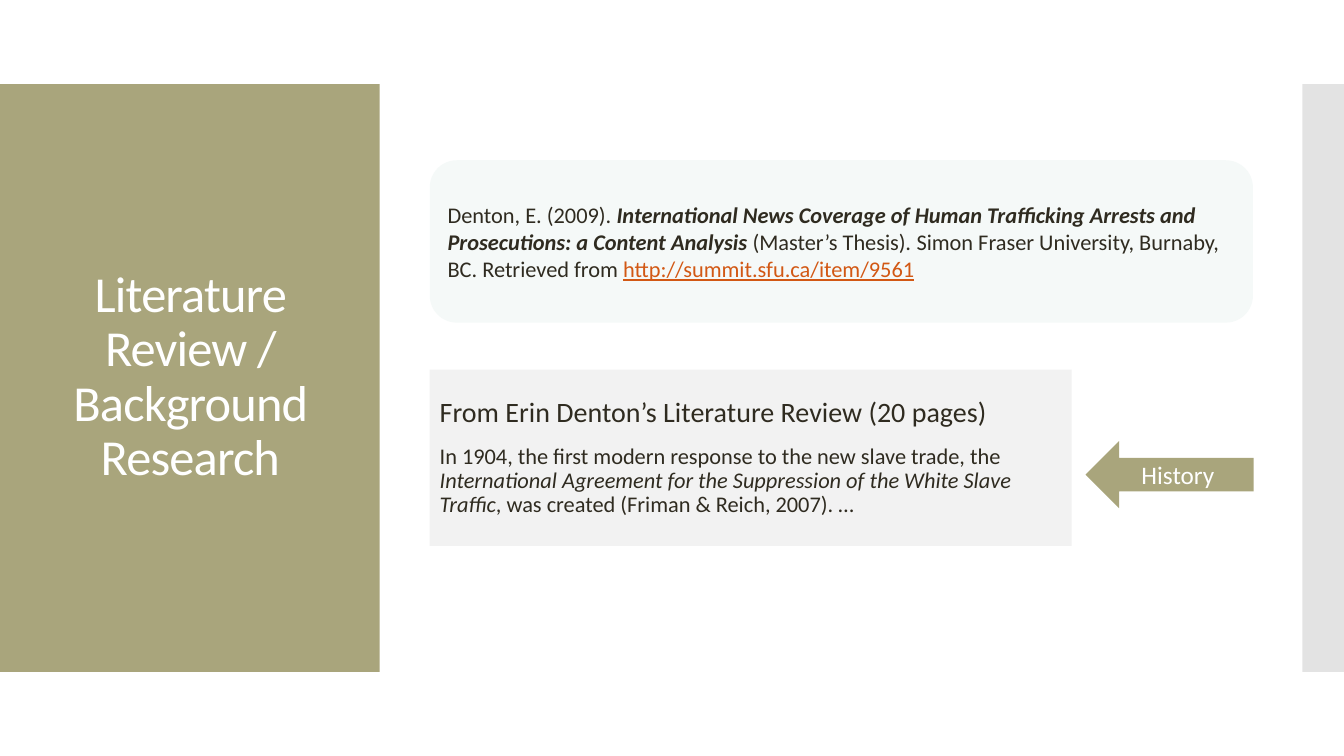
import pptx
import pptx.dml.color
import pptx.enum.shapes
import pptx.enum.text
import pptx.util
from lxml import etree

Pt = pptx.util.Pt
SHAPE = pptx.enum.shapes.MSO_SHAPE
ALIGN = pptx.enum.text.PP_ALIGN
MIDDLE = pptx.enum.text.MSO_ANCHOR.MIDDLE

COLORS = {
    "olive": "A9A57C",
    "grey": "C8C8C8",
    "pale_grey": "F2F2F2",
    "pale_blue": "F5F9F8",
    "ink": "2F2B20",
    "link": "D25814",
    "white": "FFFFFF",
}


def rgb(name):
    return pptx.dml.color.RGBColor.from_string(COLORS[name])


def add_run(p, text, font="Calibri", size=16, color="ink", bold=False,
            italic=False, underline=False, spacing=None):
    """Append a formatted run; spacing is letter spacing in points."""
    r = p.add_run()
    r.text = text
    f = r.font
    f.name, f.size = font, Pt(size)
    f.bold, f.italic, f.underline = bold, italic, underline
    f.color.rgb = rgb(color)
    if spacing is not None:
        r._r.get_or_add_rPr().set("spc", str(round(spacing * 100)))


class SlideBuilder:
    def __init__(self, prs):
        self.s = prs.slides.add_slide(prs.slide_layouts[6])

    def shape(self, kind, box, fill, alpha=None):
        sp = self.s.shapes.add_shape(kind, *map(Pt, box))
        sp.shadow.inherit = False
        sp.fill.solid()
        sp.fill.fore_color.rgb = rgb(fill)
        sp.line.fill.background()
        if alpha is not None:
            clr = sp._element.spPr.find(".//{*}srgbClr")
            etree.SubElement(clr, clr.tag.replace("srgbClr", "alpha"),
                             val=str(alpha * 1000))
        return sp

    def textbox(self, box):
        return self.s.shapes.add_textbox(*map(Pt, box))

    def add_text(self, sp, paragraphs, align=ALIGN.LEFT, line=1.0, before=0):
        """Fill sp with paragraphs, each a list of (text, format) runs."""
        tf = sp.text_frame
        tf.word_wrap = True
        tf.vertical_anchor = MIDDLE
        for i, runs in enumerate(paragraphs):
            p = tf.add_paragraph() if i else tf.paragraphs[0]
            p.alignment, p.line_spacing, p.space_before = align, line, Pt(before)
            for text, fmt in runs:
                add_run(p, text, **fmt)


def main():
    prs = pptx.Presentation()
    prs.slide_width, prs.slide_height = Pt(960), Pt(540)
    b = SlideBuilder(prs)

    b.shape(SHAPE.RECTANGLE, (0, 60, 271.2, 420), "olive")
    b.shape(SHAPE.RECTANGLE, (930.2, 60, 29.8, 420), "grey", alpha=50)

    title = b.textbox((20, 88.6, 232, 362))
    b.add_text(title, [[("Literature Review / Background Research",
                         dict(size=36, color="white", spacing=-0.6))]],
               align=ALIGN.CENTER, line=0.9)

    review = b.shape(SHAPE.RECTANGLE, (307, 264, 458.6, 126), "pale_grey")
    b.add_text(review, [
        [("From Erin Denton’s Literature Review (20 pages)", dict(size=20))],
        [("In 1904, the first modern response to the new slave trade, the ", {}),
         ("International Agreement for the Suppression of the White Slave Traffic",
          dict(italic=True)),
         (", was created (Friman & Reich, 2007). …", {})],
    ], line=0.9, before=12)

    citation = b.shape(SHAPE.ROUNDED_RECTANGLE, (307, 114.5, 588, 116), "pale_blue")
    b.add_text(citation, [[
        ("Denton, E. (2009). ", {}),
        ("International News Coverage of Human Trafficking Arrests and "
         "Prosecutions: a Content Analysis ", dict(bold=True, italic=True)),
        ("(Master’s Thesis)", {}),
        (".", dict(italic=True)),
        (" Simon Fraser University, Burnaby, BC. Retrieved from ", {}),
        ("http://summit.sfu.ca/item/9561", dict(color="link", underline=True)),
    ]])

    history = b.shape(SHAPE.LEFT_ARROW, (775.4, 315, 120, 48), "olive")
    b.add_text(history, [[("History", dict(size=18, color="white"))]],
               align=ALIGN.CENTER)

    prs.save("out.pptx")


if __name__ == "__main__":
    main()
